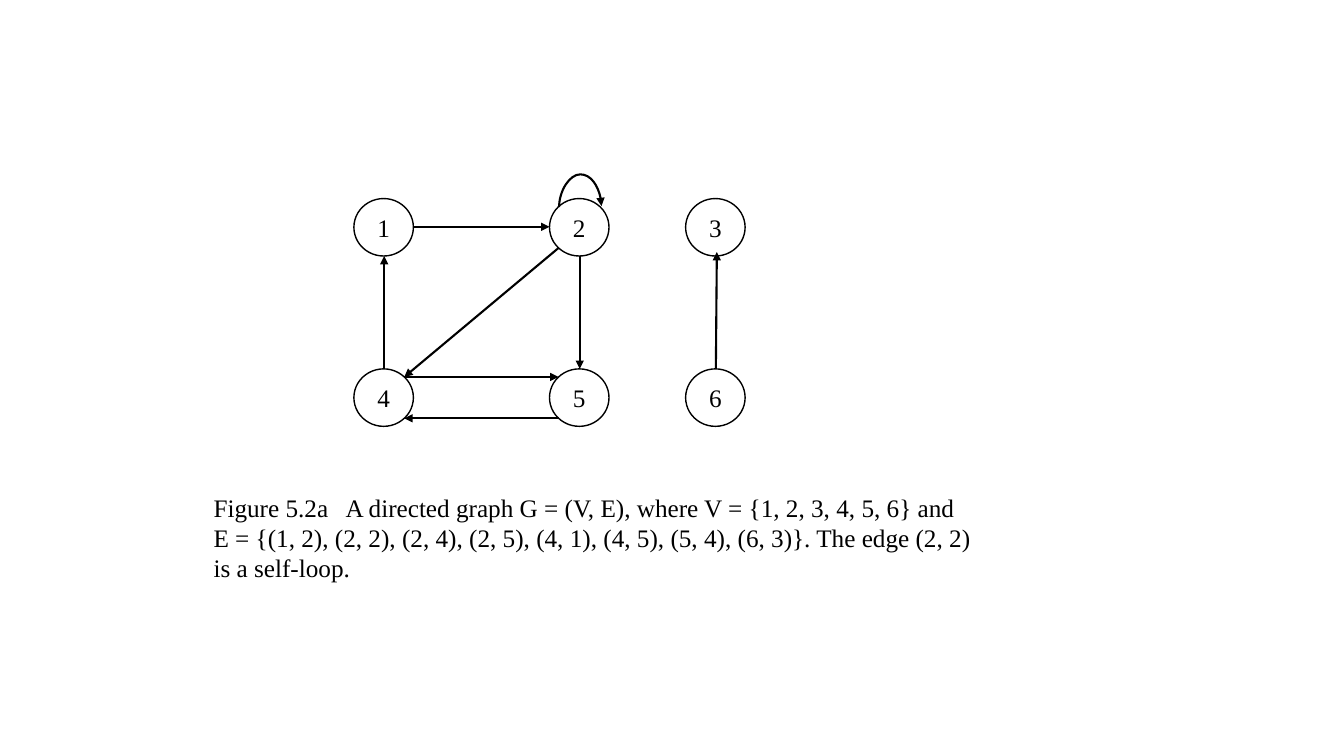
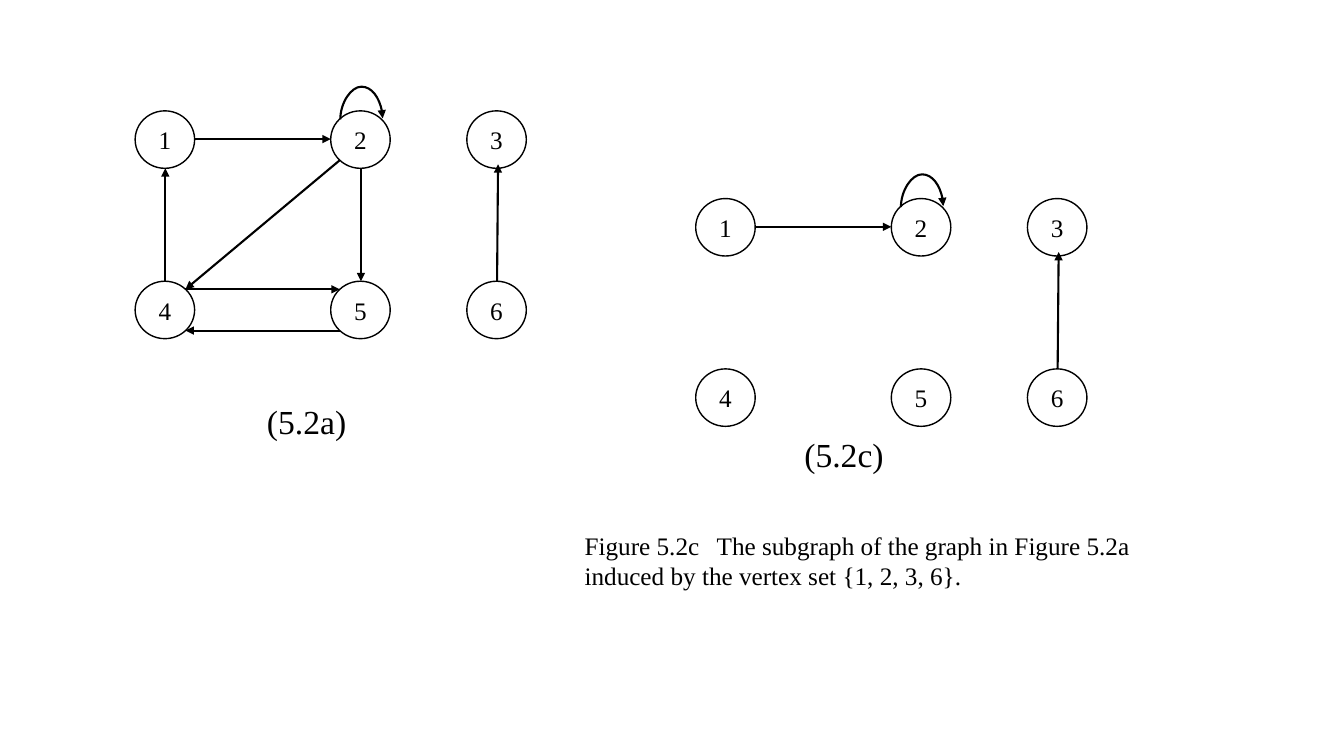
from dataclasses import dataclass
from enum import Enum

from lxml.etree import SubElement
from pptx import Presentation
from pptx.dml.color import RGBColor
from pptx.enum.shapes import MSO_AUTO_SHAPE_TYPE as ShapeType
from pptx.enum.shapes import MSO_CONNECTOR as ConnectorType
from pptx.enum.text import MSO_ANCHOR as Anchor
from pptx.enum.text import MSO_AUTO_SIZE as AutoSize
from pptx.enum.text import PP_ALIGN as Align
from pptx.oxml.ns import qn
from pptx.shapes.connector import Connector
from pptx.slide import Slide
from pptx.text.text import TextFrame
from pptx.util import Emu, Pt

BLACK = RGBColor(0x00, 0x00, 0x00)
WHITE = RGBColor(0xFF, 0xFF, 0xFF)
FONT = "Times New Roman"
EMU_PER_PX = 9144

NODE_WIDTH, NODE_HEIGHT = 59, 57
COLUMNS = (0, 194, 329)
ROWS = (0, 169)
LOOP_START = (31, 29)
LOOP_END = (30, -13)
LOOP_RISE = 33
CAPTION_TAB = 131


class Site(Enum):
    TOP = (30, 0)
    TOP_LEFT = (9, 8)
    TOP_RIGHT = (50, 8)
    LEFT = (0, 28)
    RIGHT = (59, 28)
    BOTTOM = (30, 57)
    BOTTOM_LEFT = (9, 49)
    BOTTOM_RIGHT = (50, 49)
    INNER_BOTTOM = (31, 53)


@dataclass(frozen=True)
class Edge:
    source: int
    source_site: Site
    target: int
    target_site: Site


@dataclass(frozen=True)
class Graph:
    left: int
    top: int
    edges: tuple[Edge, ...]
    loop_node: int = 2

    def node_corner(self, number: int) -> tuple[int, int]:
        row, column = divmod(number - 1, len(COLUMNS))
        return self.left + COLUMNS[column], self.top + ROWS[row]

    def point(self, number: int, offset: tuple[int, int]) -> tuple[int, int]:
        x, y = self.node_corner(number)
        return x + offset[0], y + offset[1]


@dataclass(frozen=True)
class Label:
    left: int
    top: int
    width: int
    height: int
    lines: tuple[str, ...]
    size: int = 18
    tab: int | None = None


FULL_EDGES = (
    Edge(1, Site.RIGHT, 2, Site.LEFT),
    Edge(4, Site.TOP, 1, Site.BOTTOM),
    Edge(2, Site.BOTTOM_LEFT, 4, Site.TOP_RIGHT),
    Edge(2, Site.BOTTOM, 5, Site.TOP),
    Edge(6, Site.TOP, 3, Site.INNER_BOTTOM),
    Edge(4, Site.TOP_RIGHT, 5, Site.TOP_LEFT),
    Edge(5, Site.BOTTOM_LEFT, 4, Site.BOTTOM_RIGHT),
)
INDUCED_VERTICES = {1, 2, 3, 6}
INDUCED_EDGES = tuple(
    edge for edge in FULL_EDGES if {edge.source, edge.target} <= INDUCED_VERTICES
)

SLIDES = (
    (
        (Graph(351, 197, FULL_EDGES),),
        (
            Label(202, 483, 773, 101, (
                "Figure 5.2a\tA directed graph G = (V, E), where V = {1, 2, 3, 4, 5, 6} and "
                "E = {(1, 2), (2, 2), (2, 4), (2, 5), (4, 1), (4, 5), (5, 4), (6, 3)}. "
                "The edge (2, 2) is a self-loop.",
            ), tab=CAPTION_TAB),
        ),
    ),
    (
        (Graph(690, 197, INDUCED_EDGES), Graph(134, 110, FULL_EDGES)),
        (
            Label(570, 521, 597, 71, (
                "Figure 5.2c\tThe subgraph of the graph in Figure 5.2a",
                "induced by the vertex set {1, 2, 3, 6}.",
            ), tab=CAPTION_TAB),
            Label(255, 393, 126, 50, ("(5.2a)",), size=24),
            Label(788, 426, 126, 50, ("(5.2c)",), size=24),
        ),
    ),
)


def px(length: int) -> Emu:
    return Emu(length * EMU_PER_PX)


def write_text(
    text_frame: TextFrame,
    lines: tuple[str, ...],
    *,
    size: int = 18,
    align: Align = Align.LEFT,
    anchor: Anchor = Anchor.TOP,
    tab: int | None = None,
) -> None:
    text_frame.word_wrap = True
    text_frame.vertical_anchor = anchor
    for index, line in enumerate(lines):
        paragraph = text_frame.add_paragraph() if index else text_frame.paragraphs[0]
        paragraph.alignment = align
        run = paragraph.add_run()
        run.text = line
        run.font.name = FONT
        run.font.size = Pt(size)
        run.font.color.rgb = BLACK
        if tab is not None and "\t" in line:
            properties = paragraph._p.get_or_add_pPr()
            tab_list = SubElement(properties, qn("a:tabLst"))
            SubElement(tab_list, qn("a:tab"), pos=str(px(tab)), algn="l")


def add_node(slide: Slide, graph: Graph, number: int) -> None:
    left, top = graph.node_corner(number)
    node = slide.shapes.add_shape(
        ShapeType.OVAL, px(left), px(top), px(NODE_WIDTH), px(NODE_HEIGHT)
    )
    node.shadow.inherit = False
    node.fill.solid()
    node.fill.fore_color.rgb = WHITE
    node.line.color.rgb = BLACK
    node.line.width = Pt(1)
    write_text(node.text_frame, (str(number),), align=Align.CENTER, anchor=Anchor.MIDDLE)


def add_arrow(
    slide: Slide,
    start: tuple[int, int],
    end: tuple[int, int],
    kind: ConnectorType = ConnectorType.STRAIGHT,
) -> Connector:
    arrow = slide.shapes.add_connector(kind, *map(px, start + end))
    arrow.line.color.rgb = BLACK
    arrow.line.width = Pt(1.5)
    SubElement(arrow.line._get_or_add_ln(), qn("a:tailEnd"), type="triangle")
    SubElement(arrow._element.spPr, qn("a:effectLst"))
    return arrow


def add_self_loop(slide: Slide, graph: Graph) -> None:
    start = graph.point(graph.loop_node, LOOP_START)
    end = graph.point(graph.loop_node, LOOP_END)
    loop = add_arrow(slide, start, end, ConnectorType.CURVE)
    properties = loop._element.spPr
    properties.find(qn("a:xfrm")).set("rot", str(90 * 60000))
    adjustments = properties.find(qn("a:prstGeom")).find(qn("a:avLst"))
    bend = LOOP_RISE * 100000 // abs(start[0] - end[0])
    SubElement(adjustments, qn("a:gd"), name="adj1", fmla=f"val {bend}")


def add_graph(slide: Slide, graph: Graph) -> None:
    for number in range(1, len(COLUMNS) * len(ROWS) + 1):
        add_node(slide, graph, number)
    for edge in graph.edges:
        add_arrow(
            slide,
            graph.point(edge.source, edge.source_site.value),
            graph.point(edge.target, edge.target_site.value),
        )
    add_self_loop(slide, graph)


def add_label(slide: Slide, label: Label) -> None:
    box = slide.shapes.add_textbox(
        px(label.left), px(label.top), px(label.width), px(label.height)
    )
    write_text(box.text_frame, label.lines, size=label.size, tab=label.tab)
    box.text_frame.auto_size = AutoSize.SHAPE_TO_FIT_TEXT


def main() -> None:
    presentation = Presentation()
    presentation.slide_width = px(1333)
    presentation.slide_height = px(750)
    blank_layout = presentation.slide_layouts[6]
    for graphs, labels in SLIDES:
        slide = presentation.slides.add_slide(blank_layout)
        for graph in graphs:
            add_graph(slide, graph)
        for label in labels:
            add_label(slide, label)
    presentation.save("out.pptx")


if __name__ == "__main__":
    main()
